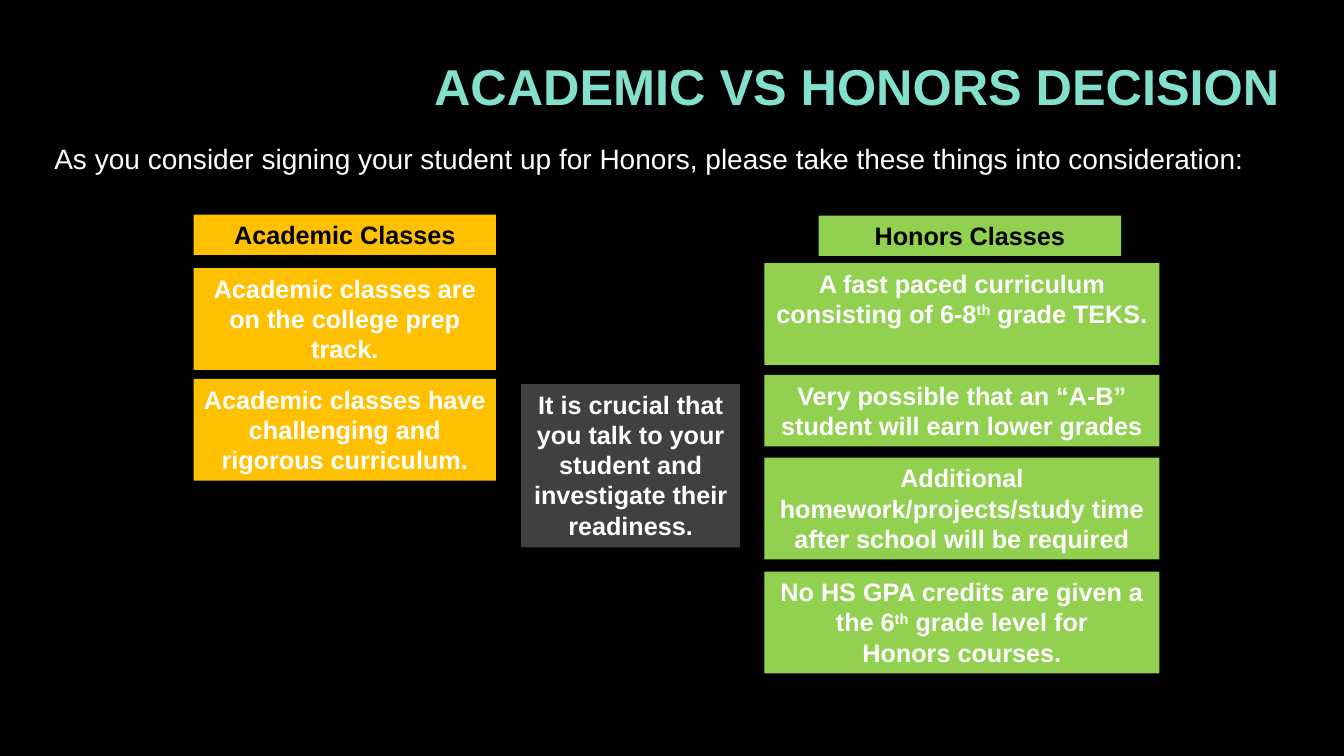
from dataclasses import dataclass

from pptx import Presentation
from pptx.dml.color import RGBColor as RGB
from pptx.enum.shapes import MSO_SHAPE as SHAPE
from pptx.enum.text import MSO_ANCHOR as ANCHOR, PP_ALIGN as ALIGN
from pptx.util import Pt

PX = 9144


@dataclass(frozen=True)
class Theme:
    font: str = "Arial"
    black: str = "000000"
    white: str = "FFFFFF"
    mint: str = "82E0CD"
    amber: str = "FFC000"
    green: str = "92D050"
    gray: str = "404040"
    title: int = 36
    intro: int = 20
    body: int = 18


T = Theme()

ACADEMIC = [
    (266, 101, "Academic classes are on the college prep track."),
    (376, 101, "Academic classes have challenging and rigorous curriculum."),
]
HONORS = [
    (261, 101, "A fast paced curriculum consisting of 6-8^th^ grade TEKS."),
    (372, 71, "Very possible that an “A-B” student will earn lower grades"),
    (454, 101, "Additional homework/projects/study time after school will be required"),
    (567, 101, "No HS GPA credits are given a the 6^th^ grade level for\nHonors courses."),
]


def write(sp, text, size, color, bold=True, align=ALIGN.CENTER, anchor=ANCHOR.TOP):
    tf = sp.text_frame
    tf.word_wrap = True
    tf.vertical_anchor = anchor
    for i, line in enumerate(text.split("\n")):
        p = tf.add_paragraph() if i else tf.paragraphs[0]
        p.alignment = align
        p.font.name = T.font
        p.font.size = Pt(size)
        p.font.bold = bold
        p.font.color.rgb = RGB.from_string(color)
        for j, part in enumerate(line.split("^")):
            r = p.add_run()
            r.text = part
            if j % 2:
                r.font._element.set("baseline", "30000")


def add_box(s, x, y, w, h, text, fill, color=T.white, size=T.body, anchor=ANCHOR.TOP):
    sp = s.shapes.add_shape(SHAPE.RECTANGLE, x * PX, y * PX, w * PX, h * PX)
    sp.shadow.inherit = False
    sp.fill.solid()
    sp.fill.fore_color.rgb = RGB.from_string(fill)
    sp.line.fill.background()
    write(sp, text, size, color, anchor=anchor)


def add_text(s, x, y, w, h, text):
    sp = s.shapes.add_textbox(x * PX, y * PX, w * PX, h * PX)
    write(sp, text, T.intro, T.white, bold=False, align=ALIGN.LEFT)


def add_column(s, x, w, fill, reasons):
    for y, h, text in reasons:
        add_box(s, x, y, w, h, text, fill)


def main():
    prs = Presentation()
    prs.slide_width, prs.slide_height = 1333 * PX, 750 * PX
    s = prs.slides.add_slide(prs.slide_layouts[6])
    s.background.fill.solid()
    s.background.fill.fore_color.rgb = RGB.from_string(T.black)

    add_box(s, 375, 27, 950, 116, "ACADEMIC VS HONORS DECISION",
            T.black, T.mint, T.title, ANCHOR.MIDDLE)
    add_text(s, 44, 135, 1202, 44,
             "As you consider signing your student up for Honors, "
             "please take these things into consideration:")

    add_box(s, 192, 213, 300, 40, "Academic Classes", T.amber, T.black)
    add_column(s, 192, 300, T.amber, ACADEMIC)
    add_box(s, 517, 381, 217, 162,
            "It is crucial that you talk to your student "
            "and investigate their readiness.", T.gray)
    add_box(s, 812, 214, 300, 40, "Honors Classes", T.green, T.black)
    add_column(s, 758, 392, T.green, HONORS)

    prs.save("out.pptx")


if __name__ == "__main__":
    main()
